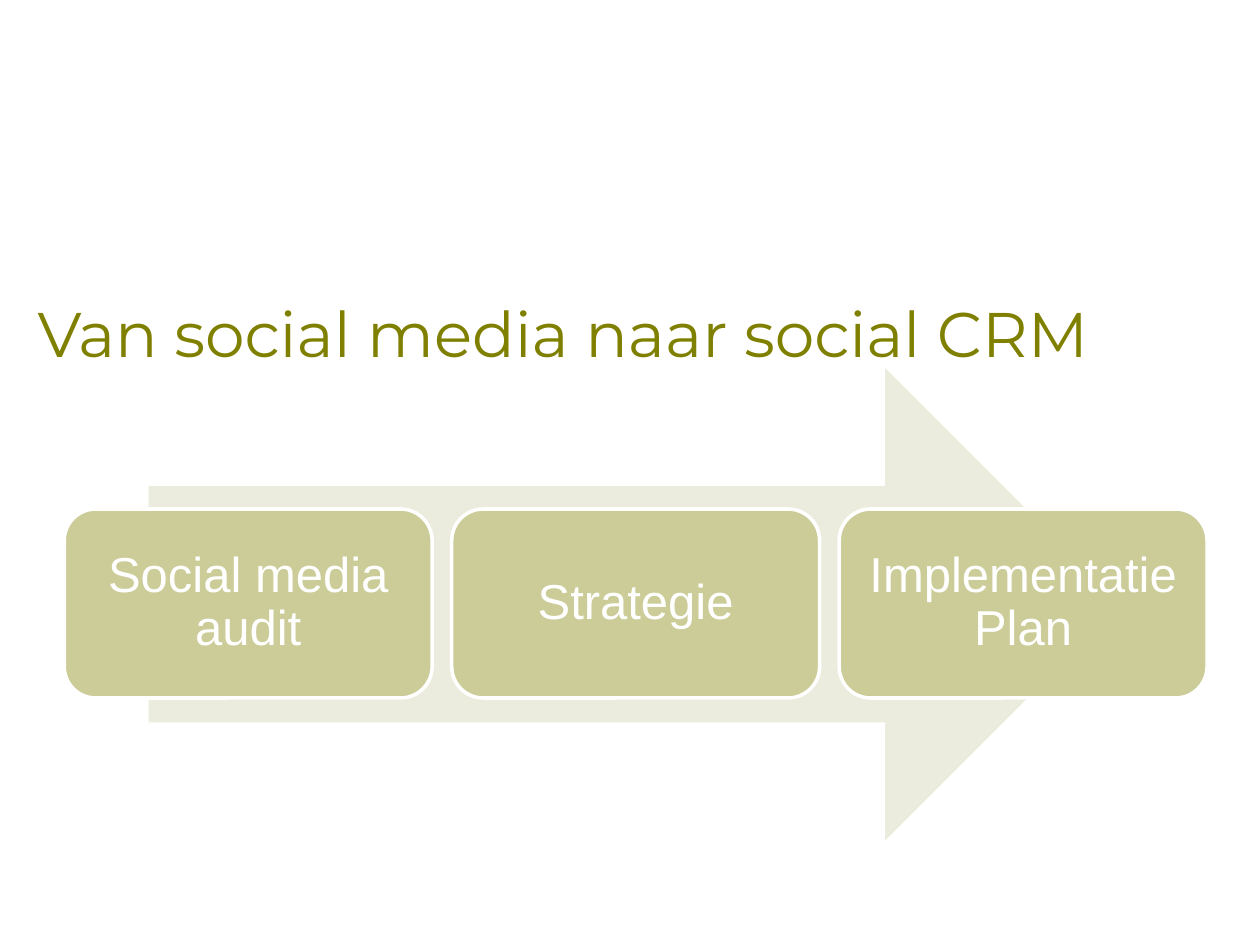
from pptx import Presentation
from pptx.dml.color import RGBColor
from pptx.enum.shapes import MSO_SHAPE as Shape
from pptx.enum.text import MSO_ANCHOR as Anchor, PP_ALIGN as Align
from pptx.util import Inches, Pt

OLIVE = RGBColor(0x80, 0x80, 0x00)
KHAKI = RGBColor(0xCC, 0xCC, 0x99)
PALE = RGBColor(0xEC, 0xEC, 0xDE)
WHITE = RGBColor(0xFF, 0xFF, 0xFF)

STEPS = ["Social media audit", "Strategie", "Implementatie Plan"]
STEP_LEFT, STEP_PITCH = 0.51, 3.075

TITLE_FONT = {"name": "Montserrat", "size": Pt(36)}
STEP_FONT = {"name": "Arial", "size": Pt(28)}
STEP_PARAGRAPH = {"alignment": Align.CENTER, "line_spacing": 0.9}
STEP_FRAME = {
    f"margin_{side}": Inches(0.12) for side in ("left", "top", "right", "bottom")
}


def apply(target, values):
    for name, value in values.items():
        setattr(target, name, value)


def write(frame, text, font, color):
    apply(frame, {"word_wrap": True, "vertical_anchor": Anchor.MIDDLE})
    paragraph = frame.paragraphs[0]
    run = paragraph.add_run()
    run.text = text
    apply(run.font, font)
    run.font.color.rgb = color
    return paragraph


def add_title(slide, text):
    title = slide.shapes.add_textbox(
        Inches(0.2), Inches(2.18), Inches(9.8), Inches(0.92)
    )
    write(title.text_frame, text, TITLE_FONT, OLIVE)


def add_filled(slide, kind, left, top, width, height, color):
    figure = slide.shapes.add_shape(
        kind, Inches(left), Inches(top), Inches(width), Inches(height)
    )
    figure.shadow.inherit = False
    figure.fill.solid()
    figure.fill.fore_color.rgb = color
    figure.line.fill.background()
    return figure


def add_step(slide, left, text):
    step = add_filled(slide, Shape.ROUNDED_RECTANGLE, left, 4.04, 2.92, 1.5, KHAKI)
    step.line.color.rgb = WHITE
    step.line.width = Pt(2)
    apply(step.text_frame, STEP_FRAME)
    apply(write(step.text_frame, text, STEP_FONT, WHITE), STEP_PARAGRAPH)


def main():
    deck = Presentation()
    apply(deck, {"slide_width": Inches(10), "slide_height": Inches(7.5)})
    slide = deck.slides.add_slide(deck.slide_layouts[6])
    add_title(slide, "Van social media naar social CRM")
    add_filled(slide, Shape.RIGHT_ARROW, 1.18, 2.92, 7.72, 3.75, PALE)
    for index, text in enumerate(STEPS):
        add_step(slide, STEP_LEFT + index * STEP_PITCH, text)
    deck.save("out.pptx")


if __name__ == "__main__":
    main()
